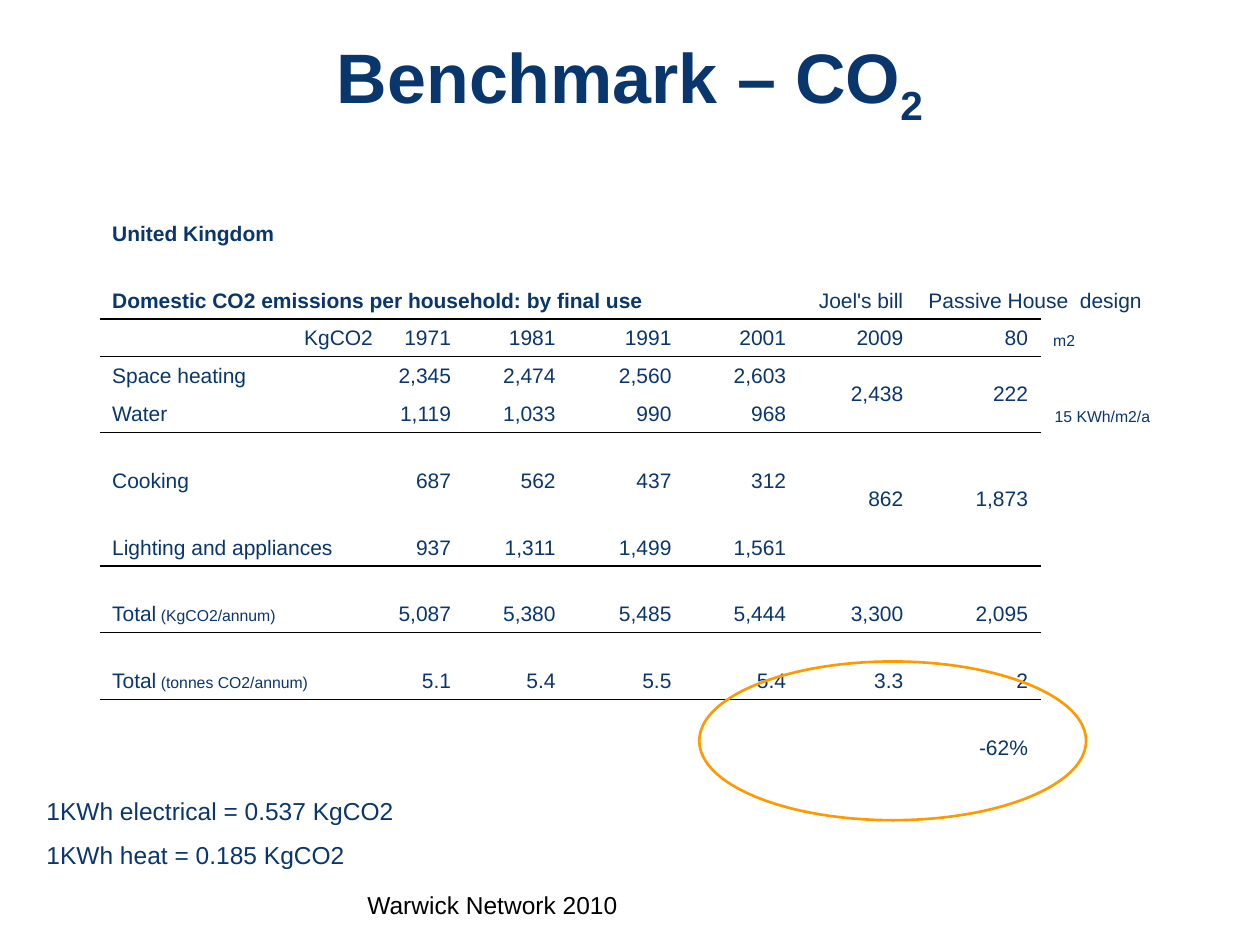
from lxml.etree import SubElement
from pptx import Presentation
from pptx.dml.color import RGBColor
from pptx.enum.shapes import MSO_SHAPE as SHAPE
from pptx.enum.text import MSO_ANCHOR as ANCHOR, PP_ALIGN as ALIGN
from pptx.oxml.ns import qn
from pptx.util import Inches, Pt

COLORS = {"navy": "09366D", "black": "000000", "white": "FFFFFF", "orange": "FF9900"}
COL_WIDTHS = [2.03, 0.24, 0.62, 0.83, 0.92, 0.91, 0.93, 0.99, 0.98]
ROW_HEIGHTS = [0.53, 0.53, 0.29, 0.29, 0.29] + [0.53] * 5
ROWS = [
    ["United Kingdom"],
    ["Domestic CO2 emissions per household: by final use", "", "", "", "", "",
     "Joel's bill", "Passive House  design"],
    ["KgCO2", "", "1971", "1981", "1991", "2001", "2009", "80", "m2"],
    ["Space heating", "", "2,345", "2,474", "2,560", "2,603", "2,438", "222", "15 KWh/m2/a"],
    ["Water", "", "1,119", "1,033", "990", "968"],
    ["Cooking", "", "687", "562", "437", "312", "862", "1,873"],
    ["Lighting and appliances", "", "937", "1,311", "1,499", "1,561"],
    ["Total (KgCO2/annum)", "", "5,087", "5,380", "5,485", "5,444", "3,300", "2,095"],
    ["Total (tonnes CO2/annum)", "", "5.1", "5.4", "5.5", "5.4", "3.3", "2"],
    ["", "", "", "", "", "", "", "-62%"],
]
RULED_ROWS = {1, 2, 4, 6, 7, 8}  # rows with a line below
RULED_COLS = 8                   # the units column stays open
# (row, column) -> (row, column) of the opposite corner
MERGES = {(0, 1): (0, 2), (1, 0): (1, 4), (1, 7): (1, 8)}
MERGES.update({(r, 0): (r, 1) for r in range(2, 10)})
MERGES.update({(r, c): (r + 1, c) for r, c in [(3, 6), (3, 7), (3, 8), (5, 6), (5, 7)]})
ALIGNS = {(1, 7): ALIGN.LEFT, (2, 0): ALIGN.RIGHT, (2, 8): ALIGN.LEFT, (3, 8): ALIGN.CENTER}


def rgb(name):
    return RGBColor.from_string(COLORS[name])


def add_run(p, text, size, color="navy", bold=False):
    r = p.add_run()
    r.text = text
    for key, value in {"name": "Arial", "size": Pt(size), "bold": bold}.items():
        setattr(r.font, key, value)
    r.font.color.rgb = rgb(color)
    return r


def add_text_box(slide, box, anchor, align):
    tf = slide.shapes.add_textbox(*map(Inches, box)).text_frame
    tf.word_wrap = True
    tf.vertical_anchor = anchor
    tf.paragraphs[0].alignment = align
    return tf


def add_title(slide, box):
    p = add_text_box(slide, box, ANCHOR.BOTTOM, ALIGN.CENTER).paragraphs[0]
    add_run(p, "Benchmark – CO", 40, bold=True)
    sub = add_run(p, "2", 40, bold=True)
    sub._r.get_or_add_rPr().set("baseline", "-25000")


def set_borders(cell, ruled):
    tc_pr = cell._tc.get_or_add_tcPr()
    for edge in "LRTB":
        ln = SubElement(tc_pr, qn(f"a:ln{edge}"), w=str(Pt(1)))
        if edge in ruled:
            fill = SubElement(ln, qn("a:solidFill"))
            SubElement(fill, qn("a:srgbClr"), val=COLORS["black"])
        else:
            SubElement(ln, qn("a:noFill"))


def fill_cell(cell, row, col, text):
    p = cell.text_frame.paragraphs[0]
    cell.vertical_anchor = ANCHOR.MIDDLE if col in (6, 7) and row in (3, 5) else ANCHOR.BOTTOM
    p.alignment = ALIGNS.get((row, col), ALIGN.RIGHT if col else ALIGN.LEFT)
    if not text:
        SubElement(p._p, qn("a:endParaRPr"), sz="1200")
        return
    label, unit_sep, unit = text.partition(" (")
    add_run(p, label, 9 if col == 8 else 12, bold=col == 0 and row < 2)
    if unit:
        add_run(p, unit_sep + unit, 9)


def add_emissions_table(slide, left, top):
    shape = slide.shapes.add_table(
        len(ROWS), len(COL_WIDTHS), Inches(left), Inches(top),
        Inches(sum(COL_WIDTHS)), Inches(sum(ROW_HEIGHTS)))
    table = shape.table
    table.first_row = table.horz_banding = False
    for column, width in zip(table.columns, COL_WIDTHS):
        column.width = Inches(width)
    for row, height in zip(table.rows, ROW_HEIGHTS):
        row.height = Inches(height)
    for start, end in MERGES.items():
        table.cell(*start).merge(table.cell(*end))
    for r, texts in enumerate(ROWS):
        for c in range(len(COL_WIDTHS)):
            cell = table.cell(r, c)
            fill_cell(cell, r, c, texts[c] if c < len(texts) else "")
            last = r + (cell.span_height if cell.is_merge_origin else 1) - 1
            ruled = ("T" if r - 1 in RULED_ROWS else "") + ("B" if last in RULED_ROWS else "")
            set_borders(cell, ruled if c < RULED_COLS else "")
            cell.fill.background()


def add_highlight(slide, box):
    sp = slide.shapes.add_shape(SHAPE.OVAL, *map(Inches, box))
    sp.shadow.inherit = False
    sp.fill.background()
    sp.line.color.rgb = rgb("orange")
    sp.line.width = Pt(1.5)


def add_footer(slide, box):
    tf = add_text_box(slide, box, ANCHOR.BOTTOM, ALIGN.RIGHT)
    add_run(tf.paragraphs[0], "Warwick Network 2010", 14, "black")


def add_factors(slide, box):
    sp = slide.shapes.add_shape(SHAPE.RECTANGLE, *map(Inches, box))
    sp.shadow.inherit = False
    sp.fill.solid()
    sp.fill.fore_color.rgb = rgb("white")
    sp.line.fill.background()
    tf = sp.text_frame
    tf.word_wrap = True
    tf.vertical_anchor = ANCHOR.TOP
    for i, text in enumerate(["1KWh electrical = 0.537 KgCO2", "1KWh heat = 0.185 KgCO2"]):
        p = tf.add_paragraph() if i else tf.paragraphs[0]
        p.alignment = ALIGN.LEFT
        p.space_before = Pt(8 if i else 0)
        add_run(p, text, 14)


def main():
    prs = Presentation()
    prs.slide_width, prs.slide_height = Inches(10), Inches(7.5)
    slide = prs.slides.add_slide(prs.slide_layouts[6])
    add_title(slide, (0.5, 0.3, 9, 0.77))
    add_emissions_table(slide, 0.79, 1.47)
    add_highlight(slide, (5.55, 5.25, 3.07, 1.26))
    add_footer(slide, (2.67, 6.83, 2.33, 0.52))
    add_factors(slide, (0.27, 6.27, 3.7, 0.68))
    prs.save("out.pptx")


if __name__ == "__main__":
    main()
